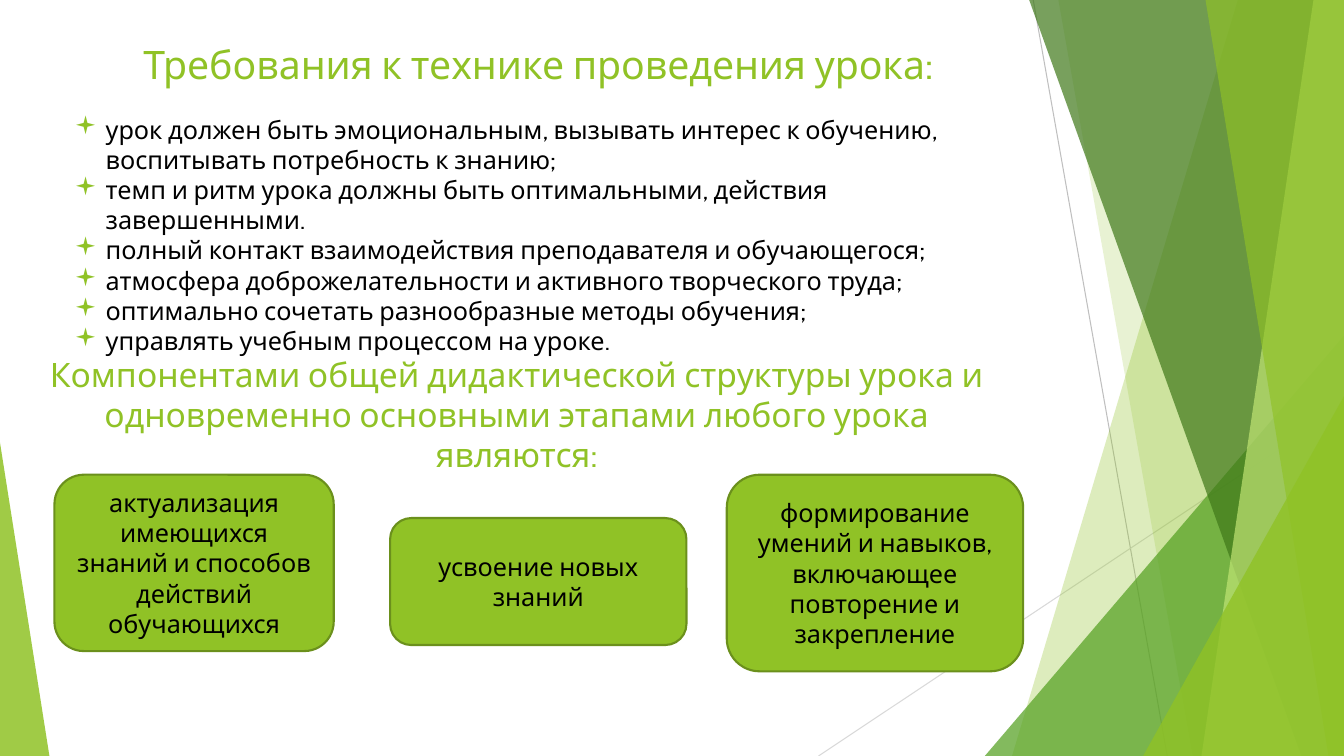
from lxml import etree
from pptx import Presentation
from pptx import util as u
from pptx.dml.color import RGBColor
from pptx.enum import shapes, text
from pptx.oxml.ns import qn

W, H = u.Inches(13.3333), u.Inches(7.5)
FONT = "Cabin"
C = {
    "lime": "90C226", "green": "54A021", "forest": "3F7819", "pale": "C0E474",
    "edge": "6B901C", "black": "000000", "grey": "BFBFBF", "silver": "D9D9D9",
}

REQUIREMENTS = [
    "урок должен быть эмоциональным, вызывать интерес к обучению, воспитывать потребность к знанию;",
    "темп и ритм урока должны быть оптимальными, действия завершенными.",
    "полный контакт взаимодействия преподавателя и обучающегося;",
    "атмосфера доброжелательности и активного творческого труда;",
    "оптимально сочетать разнообразные методы обучения;",
    "управлять учебным процессом на уроке.",
]
# Boxes are left, top, width, height in percent of the slide
STAGES = [
    ("актуализация имеющихся знаний и способов действий обучающихся", (4.05, 62.8, 20.78, 23.33)),
    ("усвоение новых знаний", (29.03, 68.53, 22.05, 16.8)),
    ("формирование умений и навыков, включающее повторение и закрепление", (54.08, 62.8, 22.05, 26)),
]


def x(share):
    return round(W * share / 100)


def y(share):
    return round(H * share / 100)


def place(box):
    left, top, width, height = box
    return x(left), y(top), x(width), y(height)


def rgb(name):
    return RGBColor.from_string(C[name])


def paint(sp, color, opacity=100):
    sp.shadow.inherit = False
    sp.fill.solid()
    sp.fill.fore_color.rgb = rgb(color)
    sp.line.fill.background()
    if opacity < 100:
        clr = sp.fill._xPr.find(qn("a:solidFill"))[0]
        etree.SubElement(clr, qn("a:alpha")).set("val", str(opacity * 1000))


def add_ray(slide, start, end, color):
    line = slide.shapes.add_connector(
        shapes.MSO_CONNECTOR.STRAIGHT, x(start[0]), y(start[1]), x(end[0]), y(end[1]))
    line.line.color.rgb = rgb(color)
    line.line.width = u.Pt(0.75)
    etree.SubElement(line._element.spPr, qn("a:effectLst"))


def add_facet(slide, top, bottom, color, opacity):
    """Full-height band from a slanted left side to the slide's right edge."""
    fb = slide.shapes.build_freeform(x(top), 0)
    fb.add_line_segments([(W, 0), (W, H), (x(bottom), H)], close=True)
    paint(fb.convert_to_shape(), color, opacity)


def add_corner(slide, box, apex, color, opacity):
    sp = slide.shapes.add_shape(shapes.MSO_SHAPE.ISOSCELES_TRIANGLE, *place(box))
    sp.adjustments[0] = apex
    paint(sp, color, opacity)


def write(tf, lines, size, color, align):
    tf.word_wrap = True
    for i, line in enumerate(lines):
        p = tf.add_paragraph() if i else tf.paragraphs[0]
        p.text = line
        p.alignment = align
        font = p.runs[0].font
        font.name, font.size, font.color.rgb = FONT, u.Pt(size), rgb(color)


def add_text(slide, box, lines, size, color, align=text.PP_ALIGN.CENTER):
    tf = slide.shapes.add_textbox(*place(box)).text_frame
    write(tf, lines, size, color, align)
    return tf


def add_bullet(p):
    pPr = p._p.get_or_add_pPr()
    indent = u.Inches(0.31)
    pPr.set("marL", str(indent))
    pPr.set("indent", str(-indent))
    clr = etree.SubElement(pPr, qn("a:buClr"))
    etree.SubElement(clr, qn("a:srgbClr")).set("val", C["lime"])
    etree.SubElement(pPr, qn("a:buFont")).set("typeface", "Wingdings")
    etree.SubElement(pPr, qn("a:buChar")).set("char", "▪")


def add_stage(slide, label, box):
    sp = slide.shapes.add_shape(shapes.MSO_SHAPE.ROUNDED_RECTANGLE, *place(box))
    paint(sp, "lime")
    sp.line.color.rgb = rgb("edge")
    sp.line.width = u.Pt(1.5)
    sp.text_frame.vertical_anchor = text.MSO_ANCHOR.MIDDLE
    write(sp.text_frame, [label], 18, "black", text.PP_ALIGN.CENTER)


def main():
    prs = Presentation()
    prs.slide_width, prs.slide_height = W, H
    slide = prs.slides.add_slide(prs.slide_layouts[6])

    # Background rays and translucent facets
    add_ray(slide, (76.88, 0), (86.85, 100), "grey")
    add_ray(slide, (100, 53.73), (60.9, 100), "silver")
    add_facet(slide, 92.1, 75.3, "lime", 30)
    add_facet(slide, 78.75, 88.73, "lime", 20)
    add_corner(slide, (73.28, 44.4, 26.72, 55.6), 1, "green", 72)
    add_facet(slide, 76.58, 96.83, "forest", 70)
    add_facet(slide, 97.73, 89.4, "pale", 70)
    add_facet(slide, 89.7, 98.85, "lime", 65)
    add_corner(slide, (85.05, 52.4, 14.95, 47.6), 1, "lime", 80)
    add_corner(slide, (0, 58.53, 3.68, 41.47), 0, "lime", 85)

    # Title and requirements
    add_text(slide, (4.8, 4.67, 70.5, 19.2), ["Требования к технике проведения урока:"], 28, "lime")
    tf = add_text(slide, (4.8, 14.4, 70.5, 29.6), REQUIREMENTS, 18, "black", text.PP_ALIGN.LEFT)
    for p in tf.paragraphs:
        add_bullet(p)

    # Lesson stages
    add_text(slide, (2.25, 46.13, 72.38, 12.13),
             ["Компонентами общей дидактической структуры урока и одновременно "
              "основными этапами любого урока являются:"], 24, "lime")
    for label, box in STAGES:
        add_stage(slide, label, box)

    prs.save("out.pptx")


if __name__ == "__main__":
    main()
